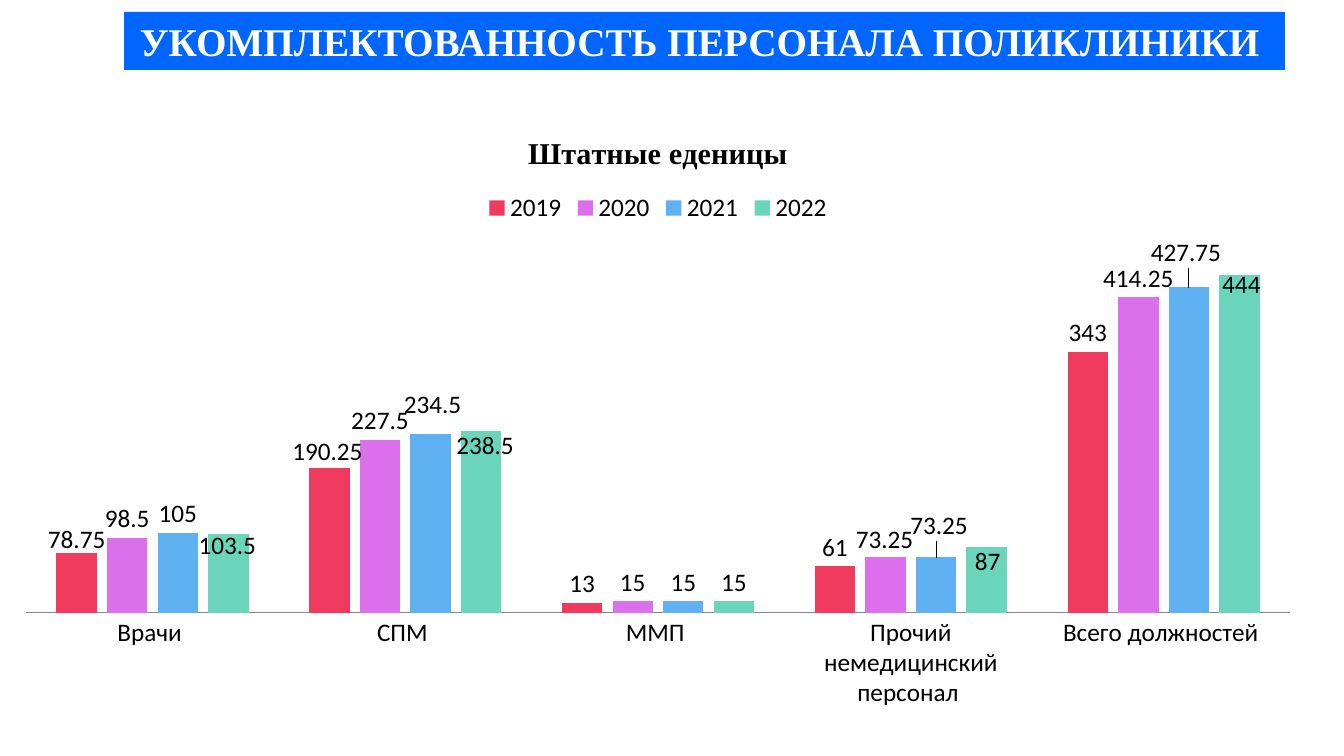
"""Build a slide with a clustered column chart of clinic staffing by year."""
from pptx import Presentation
from pptx import util as u
from pptx.chart.data import CategoryChartData
from pptx.dml.color import RGBColor
from pptx.enum import chart as ch, text
from pptx.oxml import parse_xml
from pptx.oxml.ns import nsdecls

PAGE = (1344, 756)
TITLE = "УКОМПЛЕКТОВАННОСТЬ ПЕРСОНАЛА ПОЛИКЛИНИКИ "
TITLE_BOX = (124, 12, 1161, 58)
CHART_TITLE = "Штатные еденицы"
CHART_BOX = (0, 111, 1316, 610)
PLOT_BOX = (26, 121, 1264, 381)
CATEGORIES = ["Врачи ", "СПМ ", "ММП ", "Прочий немедицинский персонал ", "Всего должностей "]
SERIES = [
    ("2019", "F03B5E", [78.75, 190.25, 13, 61, 343]),
    ("2020", "DC6FEC", [98.5, 227.5, 15, 73.25, 414.25]),
    ("2021", "60B1F2", [105, 234.5, 15, 73.25, 427.75]),
    ("2022", "6AD5BB", [103.5, 238.5, 15, 87, 444]),
]
LABEL_SHIFTS = {
    "2019": {0: (0, 6), 1: (-2, 3)},
    "2020": {3: (-1, 2)},
    "2021": {1: (2, -10), 3: (3, -12), 4: (-3, -15)},
    "2022": {0: (-1, 31), 1: (4, 34), 3: (1, 34), 4: (2, 29)},
}
TITLE_FONT = {"name": "Times New Roman", "size": u.Pt(28), "bold": True}
CHART_TITLE_FONT = {"name": "Times New Roman", "size": u.Pt(21.6), "bold": True}
CHART_FONT = {"name": "Calibri", "size": u.Pt(18), "bold": False}
TITLE_FRAME = {"word_wrap": False, "auto_size": text.MSO_AUTO_SIZE.NONE,
               "vertical_anchor": text.MSO_ANCHOR.MIDDLE}
LEGEND = {"position": ch.XL_LEGEND_POSITION.TOP, "include_in_layout": False}
CATEGORY_AXIS = {"major_tick_mark": ch.XL_TICK_MARK.NONE, "has_major_gridlines": False}
VALUE_AXIS = {"visible": False, "has_major_gridlines": False,
              "minimum_scale": 0, "maximum_scale": 500}
PLOT = {"gap_width": 150, "overlap": -25, "vary_by_categories": False}
LABELS = {"show_value": True, "position": ch.XL_LABEL_POSITION.OUTSIDE_END}


def px(length):
    return u.Emu(round(length * 914400 / 100.8))


def color(value):
    return RGBColor.from_string(value)


def apply(target, values):
    for name, value in values.items():
        setattr(target, name, value)


def style_font(font, values, hue):
    apply(font, values)
    font.color.rgb = color(hue)


def fill(target, hue):
    target.fill.solid()
    target.fill.fore_color.rgb = color(hue)


def manual_layout(modes, **lengths):
    """Return a chart layout element with lengths as shares of the chart."""
    sides = {"x": CHART_BOX[2], "w": CHART_BOX[2], "y": CHART_BOX[3], "h": CHART_BOX[3]}
    parts = "".join(f'<c:{key} val="{length / sides[key]:.4f}"/>' for key, length in lengths.items())
    return parse_xml(f'<c:layout {nsdecls("c")}><c:manualLayout>{modes}{parts}'
                     '</c:manualLayout></c:layout>')


def add_title(page):
    box = page.shapes.title
    box.left, box.top, box.width, box.height = map(px, TITLE_BOX)
    fill(box, "0066FF")
    frame = box.text_frame
    apply(frame, TITLE_FRAME)
    para = frame.paragraphs[0]
    para.alignment = text.PP_ALIGN.CENTER
    span = para.add_run()
    span.text = TITLE
    style_font(span.font, TITLE_FONT, "FFFFFF")


def add_staff_chart(page):
    data = CategoryChartData()
    data.categories = CATEGORIES
    for name, _, values in SERIES:
        data.add_series(name, values)
    kind = ch.XL_CHART_TYPE.COLUMN_CLUSTERED
    chart = page.shapes.add_chart(kind, *map(px, CHART_BOX), data).chart
    style_font(chart.font, CHART_FONT, "000000")

    chart.has_title = True
    span = chart.chart_title.text_frame.paragraphs[0].add_run()
    span.text = CHART_TITLE
    style_font(span.font, CHART_TITLE_FONT, "000000")
    chart.has_legend = True
    apply(chart.legend, LEGEND)

    apply(chart.category_axis, CATEGORY_AXIS)
    line = chart.category_axis.format.line
    line.color.rgb, line.width = color("868686"), u.Pt(0.75)
    apply(chart.value_axis, VALUE_AXIS)

    plot = chart.plots[0]
    apply(plot, PLOT)
    for series, (name, hue, _) in zip(plot.series, SERIES):
        fill(series.format, hue)
        apply(series.data_labels, LABELS)
        for index in LABEL_SHIFTS[name]:
            series.points[index].data_label.position = LABELS["position"]

    shifts = [shift for name, _, _ in SERIES for shift in LABEL_SHIFTS[name].values()]
    for label, (x, y) in zip(chart.element.xpath(".//c:dLbl"), shifts):
        label.insert(1, manual_layout("", x=x, y=y))

    area = chart.element.xpath(".//c:plotArea")[0]
    for layout in area.xpath("./c:layout"):
        area.remove(layout)
    modes = '<c:layoutTarget val="inner"/><c:xMode val="edge"/><c:yMode val="edge"/>'
    area.insert(0, manual_layout(modes, **dict(zip("xywh", PLOT_BOX))))


def main():
    deck = Presentation()
    deck.slide_width, deck.slide_height = map(px, PAGE)
    page = deck.slides.add_slide(deck.slide_layouts[5])
    add_title(page)
    add_staff_chart(page)
    deck.save("out.pptx")


if __name__ == "__main__":
    main()
